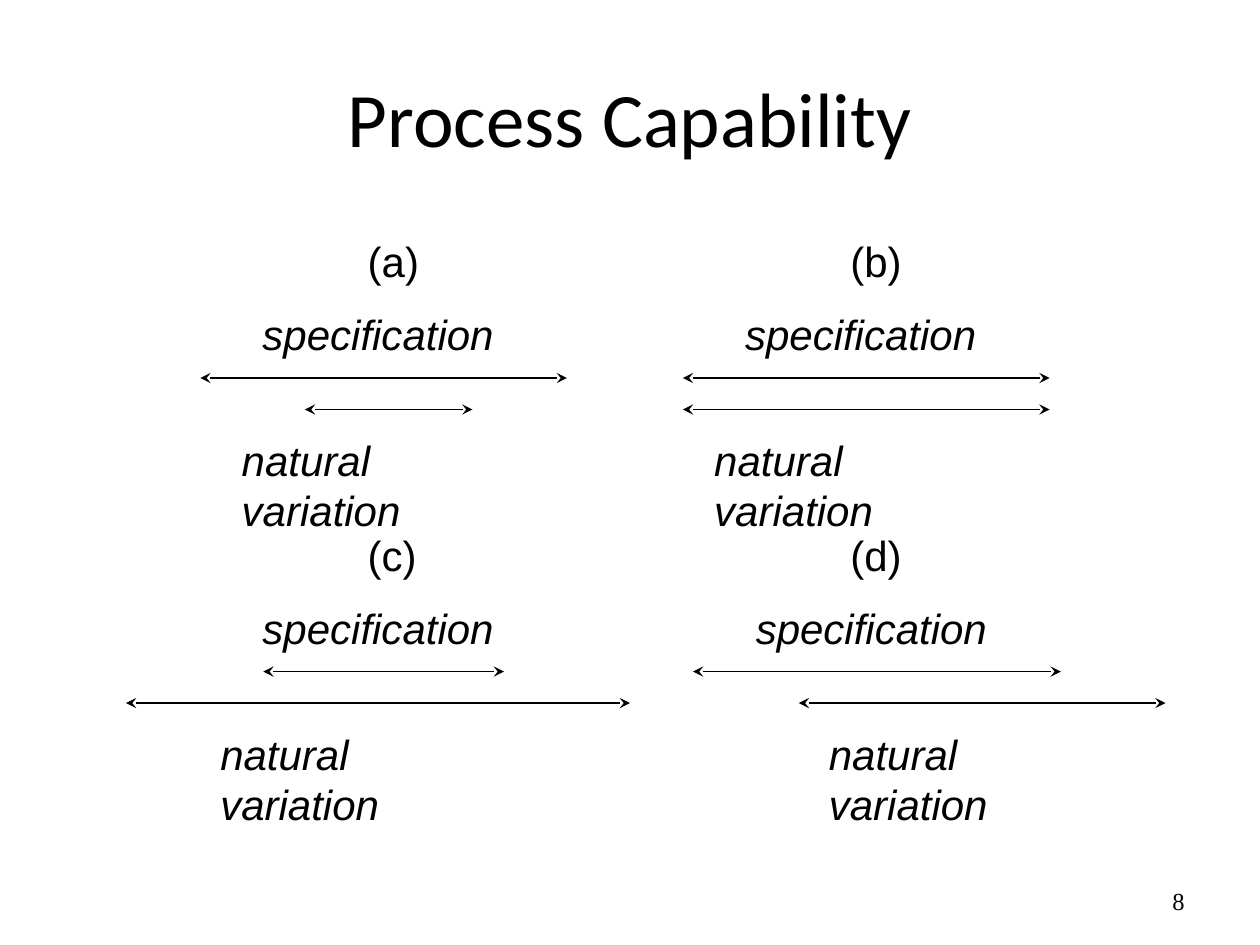
from pptx import Presentation
from pptx.dml.color import RGBColor
from pptx.enum.shapes import MSO_CONNECTOR
from pptx.enum.text import MSO_ANCHOR, PP_ALIGN
from pptx.oxml.ns import qn
from pptx.util import Inches, Pt
from lxml import etree

LINE = MSO_CONNECTOR.STRAIGHT
MID = MSO_ANCHOR.MIDDLE
CENTER, LEFT, RIGHT = PP_ALIGN.CENTER, PP_ALIGN.LEFT, PP_ALIGN.RIGHT
INK = "000000"
COL, ROW = 3.83, 2.33
ORIGIN = 1.0, 1.82
PANELS = [
    ("(a)", (0.59, 3.5), (1.42, 2.75), 0.82),
    ("(b)", (0.59, 3.5), (0.59, 3.5), 0.74),
    ("(c)", (1.09, 3.0), (0.0, 4.0), 0.65),
    ("(d)", (0.67, 3.59), (1.51, 4.42), 1.65),
]


def color(code):
    return RGBColor.from_string(code)


def style(para, face, size, align=LEFT, italic=False):
    para.alignment = align
    font = para.font
    font.name, font.size, font.italic = face, Pt(size), italic
    font.color.rgb = color(INK)


def place(shape, box):
    shape.left, shape.top, shape.width, shape.height = map(Inches, box)


def add_text(slide, text, box):
    frame = slide.shapes.add_textbox(*map(Inches, box)).text_frame
    frame.word_wrap = True
    frame.text = text
    return frame


def add_label(slide, text, box, italic=True):
    frame = add_text(slide, text, box)
    style(frame.paragraphs[0], "Arial", 24, italic=italic)


def add_arrow(slide, start, end, y):
    arrow = slide.shapes.add_connector(
        LINE, Inches(start), Inches(y), Inches(end), Inches(y))
    arrow.line.color.rgb = color(INK)
    arrow.line.width = Pt(1)
    stroke = arrow.line._get_or_add_ln()
    for end_tag in ("a:headEnd", "a:tailEnd"):
        etree.SubElement(stroke, qn(end_tag), type="stealth")
    etree.SubElement(arrow._element.spPr, qn("a:effectLst"))


def add_title(slide, box):
    title = slide.shapes.title
    place(title, box)
    title.text_frame.text = "Process Capability"
    title.text_frame.vertical_anchor = MID
    style(title.text_frame.paragraphs[0], "Calibri", 44, CENTER)


def add_panel(slide, left, top, panel):
    name, spec, natural, indent = panel
    add_label(slide, name, (left + 1.82, top, 0.65, 0.5), False)
    middle = left + sum(spec) / 2 - 0.04
    add_label(slide, "specification", (middle - 1.02, top + 0.58, 2.06, 0.5))
    for span, drop in ((spec, 1.18), (natural, 1.43)):
        add_arrow(slide, left + span[0], left + span[1], top + drop)
    add_label(slide, "natural variation",
              (left + indent, top + 1.58, 2.55, 0.5))


def add_number(slide, box):
    frame = add_text(slide, "8", box)
    frame.vertical_anchor = MID
    style(frame.paragraphs[0], "Times New Roman", 14, RIGHT)


def main():
    deck = Presentation()
    deck.slide_width, deck.slide_height = Inches(10), Inches(7.5)
    slide = deck.slides.add_slide(deck.slide_layouts[5])
    add_title(slide, (0.5, 0.3, 9, 1.25))
    for index, panel in enumerate(PANELS):
        row, col = divmod(index, 2)
        add_panel(slide, ORIGIN[0] + col * COL, ORIGIN[1] + row * ROW, panel)
    add_number(slide, (7.17, 6.95, 2.33, 0.4))
    deck.save("out.pptx")


if __name__ == "__main__":
    main()
